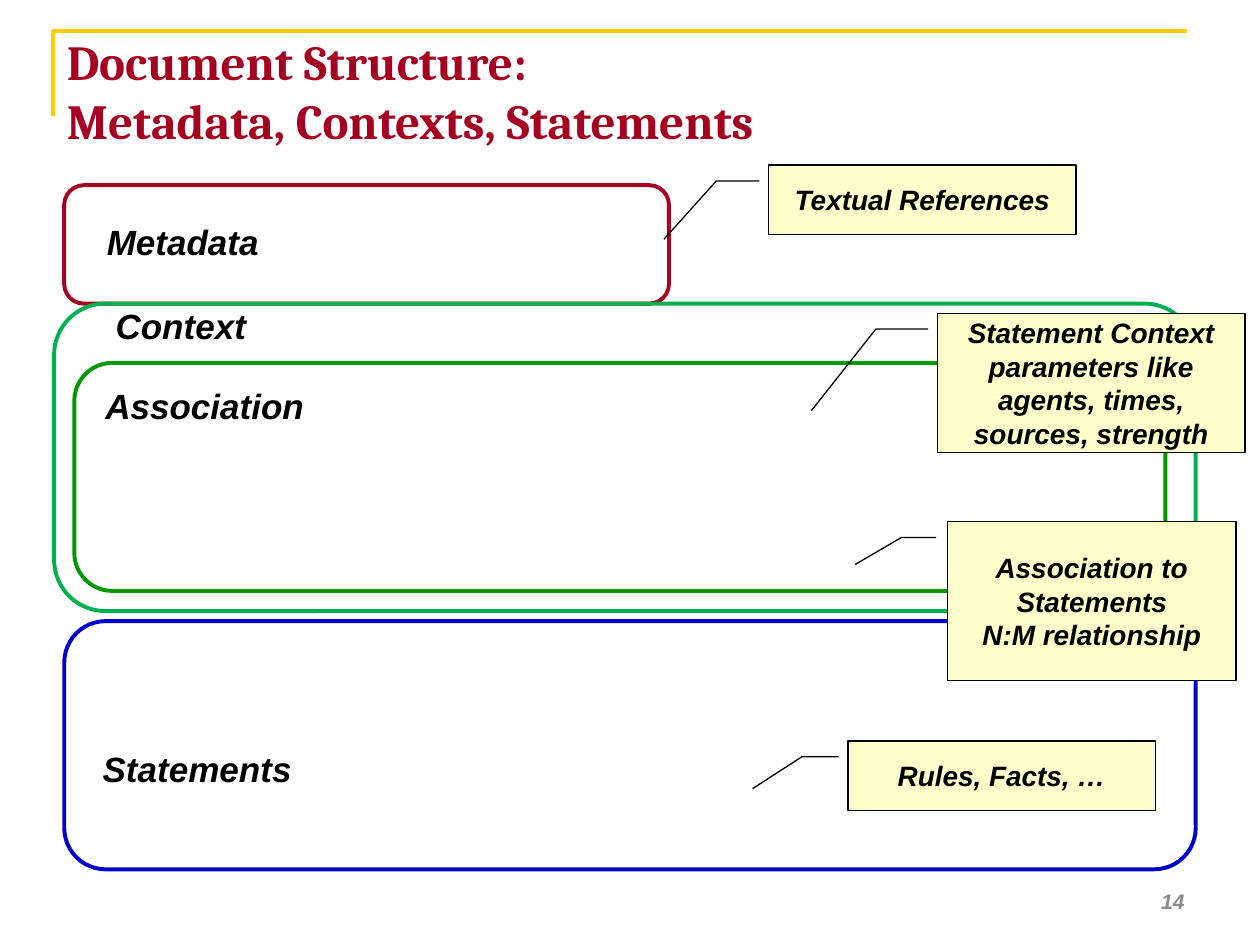
"""Build the slide on document structure: metadata, contexts and statements."""
from pptx import Presentation
from pptx.dml.color import RGBColor
from pptx.enum.shapes import MSO_SHAPE
from pptx.enum.text import MSO_ANCHOR, MSO_AUTO_SIZE, PP_ALIGN
from pptx.util import Inches, Pt

COLORS = {
    "gold": "FFCC00", "crimson": "A50021", "emerald": "00B050", "green": "009900",
    "blue": "0000CC", "cream": "FFFFCC", "black": "000000", "gray": "898989",
}


def color(name):
    return RGBColor.from_string(COLORS[name])


def write(shape, text, size, alignment, color_name="black", font="Arial", italic=True):
    shape.text_frame.text = text
    for paragraph in shape.text_frame.paragraphs:
        paragraph.alignment = alignment
        for run in paragraph.runs:
            run.font.name = font
            run.font.size = Pt(size)
            run.font.bold = True
            run.font.italic = italic
            run.font.color.rgb = color(color_name)


presentation = Presentation()
presentation.slide_width, presentation.slide_height = Inches(10), Inches(7.5)
slide = presentation.slides.add_slide(presentation.slide_layouts[5])
shapes = slide.shapes

title = shapes.title
title.left, title.top = Inches(0.43), Inches(0)
title.width, title.height = Inches(9), Inches(1.44)
write(title, "Document Structure:\vMetadata, Contexts, Statements", 28,
      PP_ALIGN.LEFT, "crimson", "Cambria", False)
title.text_frame.vertical_anchor = MSO_ANCHOR.MIDDLE
title.text_frame.auto_size = MSO_AUTO_SIZE.NONE

builder = shapes.build_freeform(Inches(0.42), Inches(0.92))
builder.add_line_segments([(Inches(0.42), Inches(0.25)), (Inches(9.42), Inches(0.25))], close=False)
bracket = builder.convert_to_shape()
bracket.shadow.inherit = False
bracket.fill.background()
bracket.line.color.rgb = color("gold")
bracket.line.width = Pt(2.25)

sections = [
    (0.51, 1.47, 4.8, 0.94, "crimson"),
    (0.43, 2.41, 9.06, 2.44, "emerald"),
    (0.59, 2.88, 8.66, 1.81, "green"),
    (0.51, 4.93, 8.98, 1.97, "blue"),
]
for left, top, width, height, color_name in sections:
    section = shapes.add_shape(MSO_SHAPE.ROUNDED_RECTANGLE, Inches(left), Inches(top),
                               Inches(width), Inches(height))
    section.shadow.inherit = False
    section.fill.background()
    section.line.color.rgb = color(color_name)
    section.line.width = Pt(2.25)

callouts = [
    ("Textual References", 6.1, 1.31, 2.44, 0.55, (0.23, -0.03, 0.23, -0.17, 1.07, -0.34)),
    ("Statement Context parameters like agents, times, sources, strength",
     7.44, 2.49, 2.44, 1.1, (0.11, -0.03, 0.11, -0.2, 0.7, -0.41)),
    ("Association to Statements\nN:M relationship",
     7.52, 4.14, 2.29, 1.26, (0.1, -0.04, 0.1, -0.16, 0.27, -0.32)),
    ("Rules, Facts, …", 6.73, 5.88, 2.44, 0.55, (0.23, -0.03, 0.23, -0.15, 0.69, -0.31)),
]
for text, left, top, width, height, leader in callouts:
    callout = shapes.add_shape(MSO_SHAPE.LINE_CALLOUT_2, Inches(left), Inches(top),
                               Inches(width), Inches(height))
    for index, value in enumerate(leader):
        callout.adjustments[index] = value
    callout.shadow.inherit = False
    callout.fill.solid()
    callout.fill.fore_color.rgb = color("cream")
    callout.line.color.rgb = color("black")
    callout.line.width = Pt(0.75)
    callout.text_frame.vertical_anchor = MSO_ANCHOR.MIDDLE
    write(callout, text, 16, PP_ALIGN.CENTER)

labels = [
    ("Metadata", 0.74, 1.7, 1.42),
    ("Context", 0.81, 2.37, 1.25),
    ("Association", 0.73, 3, 1.79),
    ("Statements", 0.71, 5.88, 1.71),
]
for text, left, top, width in labels:
    label = shapes.add_textbox(Inches(left), Inches(top), Inches(width), Inches(0.44))
    label.text_frame.word_wrap = False
    label.text_frame.auto_size = MSO_AUTO_SIZE.SHAPE_TO_FIT_TEXT
    write(label, text, 20, PP_ALIGN.CENTER)

page_number = shapes.add_textbox(Inches(7.17), Inches(6.95), Inches(2.33), Inches(0.4))
page_number.text_frame.word_wrap = True
page_number.text_frame.vertical_anchor = MSO_ANCHOR.MIDDLE
write(page_number, "14", 12, PP_ALIGN.RIGHT, "gray")

presentation.save("out.pptx")
